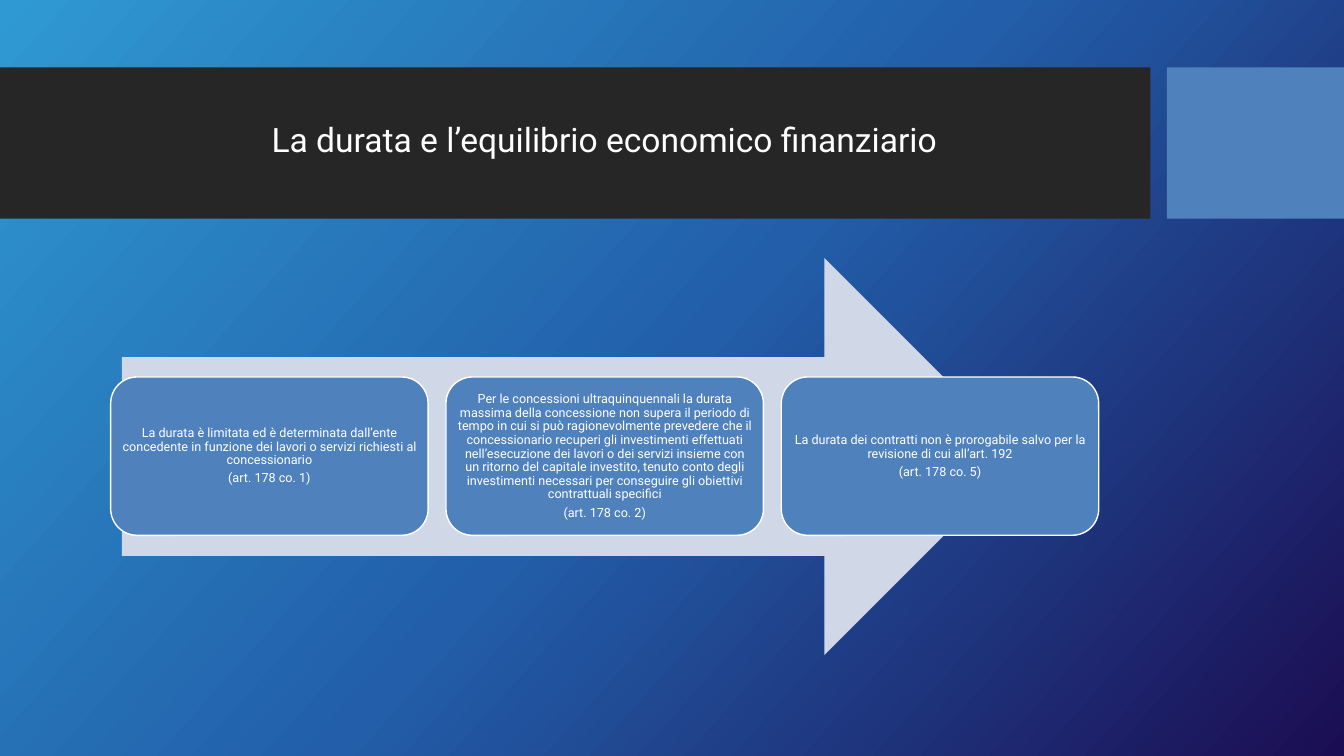
from copy import deepcopy

from pptx import Presentation
from pptx.dml.color import RGBColor
from pptx.enum.shapes import MSO_SHAPE
from pptx.enum.text import MSO_ANCHOR, MSO_AUTO_SIZE, PP_ALIGN
from pptx.util import Cm, Pt

TITLE = "La durata e l’equilibrio economico finanziario"
STEPS = [
    ("La durata è limitata ed è determinata dall’ente concedente in funzione dei "
     "lavori o servizi richiesti al concessionario",
     "(art. 178 co. 1)"),
    ("Per le concessioni ultraquinquennali la durata massima della concessione non "
     "supera il periodo di tempo in cui si può ragionevolmente prevedere che il "
     "concessionario recuperi gli investimenti effettuati nell’esecuzione dei lavori "
     "o dei servizi insieme con un ritorno del capitale investito, tenuto conto degli "
     "investimenti necessari per conseguire gli obiettivi contrattuali specifici",
     "(art. 178 co. 2)"),
    ("La durata dei contratti non è prorogabile salvo per la revisione di cui "
     "all’art. 192",
     "(art. 178 co. 5)"),
]
COLORS = {
    "sky": "2F99D3", "blue": "225EA9", "night": "1B0D53",
    "band": "262626", "accent": "4F81BD", "arrow": "D0D8E8", "white": "FFFFFF",
}
FONT = "Roboto"
RECT, ARROW, ROUNDED = (MSO_SHAPE.RECTANGLE, MSO_SHAPE.RIGHT_ARROW,
                        MSO_SHAPE.ROUNDED_RECTANGLE)
CENTER, MIDDLE, NO_FIT = PP_ALIGN.CENTER, MSO_ANCHOR.MIDDLE, MSO_AUTO_SIZE.NONE
SLIDE_W, SLIDE_H = 33.87, 19.05
BAND_TOP, BAND_H, BAND_W, TAB_LEFT = 1.7, 3.81, 28.99, 29.41
STEP_LEFT, STEP_TOP, STEP_W, STEP_H, STEP_PITCH = 2.79, 9.5, 8.0, 3.99, 8.45


def rgb(name):
    return RGBColor.from_string(COLORS[name])


def write(shape, *lines, size, after=0, inset=0.1):
    tf = shape.text_frame
    tf.word_wrap = True
    tf.auto_size = NO_FIT
    tf.vertical_anchor = MIDDLE
    tf.margin_left = tf.margin_right = tf.margin_top = tf.margin_bottom = Cm(inset)
    for i, line in enumerate(lines):
        p = tf.add_paragraph() if i else tf.paragraphs[0]
        p.alignment = CENTER
        p.line_spacing = 0.9
        p.space_before = Pt(0)
        p.space_after = Pt(after)
        r = p.add_run()
        r.text = line
        r.font.name = FONT
        r.font.size = Pt(size)
        r.font.color.rgb = rgb("white")


def add_block(s, kind, left, top, width, height, fill, outline=None):
    sp = s.shapes.add_shape(kind, Cm(left), Cm(top), Cm(width), Cm(height))
    sp.shadow.inherit = False
    sp.fill.solid()
    sp.fill.fore_color.rgb = rgb(fill)
    if outline:
        sp.line.color.rgb = rgb(outline)
        sp.line.width = Pt(1)
    else:
        sp.line.fill.background()
    return sp


def paint_background(s):
    fill = s.background.fill
    fill.gradient()
    fill.gradient_angle = 318
    first = fill.gradient_stops[0]
    stops = first.color, fill.gradient_stops[1].color
    for color, name in zip(stops, ("sky", "night")):
        color.rgb = rgb(name)
    gs_list = s.background.fill._fill._gradFill.gsLst
    middle = deepcopy(gs_list[0])
    middle.set("pos", "50000")
    gs_list.insert(1, middle)
    fill.gradient_stops[1].color.rgb = rgb("blue")


def main():
    prs = Presentation()
    prs.slide_width, prs.slide_height = Cm(SLIDE_W), Cm(SLIDE_H)
    s = prs.slides.add_slide(prs.slide_layouts[5])
    paint_background(s)

    add_block(s, RECT, 0, BAND_TOP, BAND_W, BAND_H, "band")
    add_block(s, RECT, TAB_LEFT, BAND_TOP, SLIDE_W - TAB_LEFT, BAND_H, "accent")

    title = s.shapes.title
    title.left, title.top, title.width, title.height = Cm(1.88), Cm(2.08), Cm(26.7), Cm(3)
    write(title, TITLE, size=24)
    title.element.getparent().append(title.element)

    add_block(s, ARROW, 3.07, 6.5, 22.71, 10.01, "arrow")
    for i, lines in enumerate(STEPS):
        step = add_block(s, ROUNDED, STEP_LEFT + i * STEP_PITCH, STEP_TOP,
                         STEP_W, STEP_H, "accent", outline="white")
        write(step, *lines, size=9, after=3.15)

    prs.save("out.pptx")


if __name__ == "__main__":
    main()
